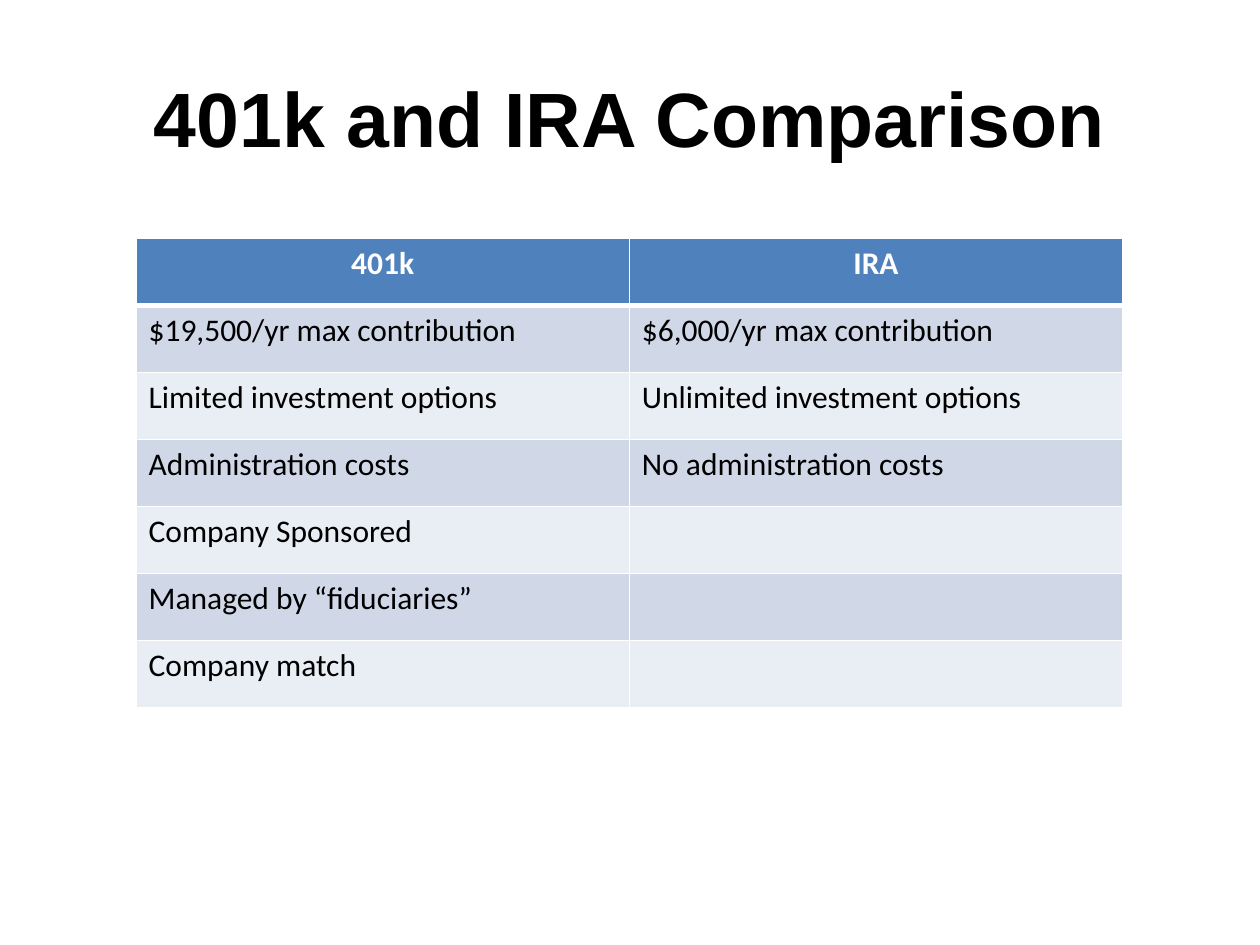
from lxml import etree
from pptx import Presentation
from pptx import util as u
from pptx.dml.color import RGBColor
from pptx.enum import text
from pptx.oxml.ns import qn

WIDTH, HEIGHT = u.Inches(10), u.Inches(7.5)
COLORS = {"title": "000000", "body": "000000", "header_text": "FFFFFF", "header": "4F81BD",
          "odd": "D0D8E8", "even": "E9EDF4", "rule": "FFFFFF"}
HEADINGS = ("401k", "IRA")
ROWS = [
    ("$19,500/yr max contribution", "$6,000/yr max contribution"),
    ("Limited investment options", "Unlimited investment options"),
    ("Administration costs", "No administration costs"),
    ("Company Sponsored", ""),
    ("Managed by “fiduciaries”", ""),
    ("Company match", ""),
]


def color(name):
    return RGBColor.from_string(COLORS[name])


def share_box(left, top, width, height):
    """Turn shares of the slide's size into lengths."""
    return [round(share * side) for share, side in
            zip((left, top, width, height), (WIDTH, HEIGHT, WIDTH, HEIGHT))]


def write(frame, words, *, font, size, ink, bold=False, align=text.PP_ALIGN.LEFT):
    para = frame.paragraphs[0]
    para.alignment = align
    span = para.add_run()
    span.text = words
    span.font.name, span.font.size, span.font.bold = font, u.Pt(size), bold
    span.font.color.rgb = color(ink)


def rule_cell(cell, **widths):
    """Draw the borders of a cell, with widths in points by side."""
    properties = cell._tc.get_or_add_tcPr()
    for side in "LRTB":
        line = etree.SubElement(properties, qn(f"a:ln{side}"), w=str(u.Pt(widths.get(side, 1))))
        fill = etree.SubElement(line, qn("a:solidFill"))
        etree.SubElement(fill, qn("a:srgbClr"), val=COLORS["rule"])


def add_title(page, box):
    frame = page.shapes.add_textbox(*box).text_frame
    frame.word_wrap = True
    frame.vertical_anchor = text.MSO_ANCHOR.MIDDLE
    write(frame, "401k and IRA Comparison", font="Arial", size=44, ink="title",
          bold=True, align=text.PP_ALIGN.CENTER)


def add_comparison(page, box):
    lines = [HEADINGS, *ROWS]
    table = page.shapes.add_table(len(lines), len(HEADINGS), *box).table
    for row, entries in enumerate(lines):
        header = row == 0
        for column, words in enumerate(entries):
            cell = table.cell(row, column)
            # A heavier rule parts the header from the body
            rule_cell(cell, T=3 if row == 1 else 1, B=3 if header else 1)
            cell.fill.solid()
            cell.fill.fore_color.rgb = color("header" if header else "odd" if row % 2 else "even")
            if words:
                write(cell.text_frame, words, font="Calibri", size=18, bold=header,
                      ink="header_text" if header else "body",
                      align=text.PP_ALIGN.CENTER if header else text.PP_ALIGN.LEFT)


def main():
    deck = Presentation()
    deck.slide_width, deck.slide_height = WIDTH, HEIGHT
    page = deck.slides.add_slide(deck.slide_layouts[6])
    add_title(page, share_box(0.05, 0.04, 0.9, 1 / 6))
    add_comparison(page, share_box(0.108, 0.252, 0.783, 0.497))
    deck.save("out.pptx")


if __name__ == "__main__":
    main()
